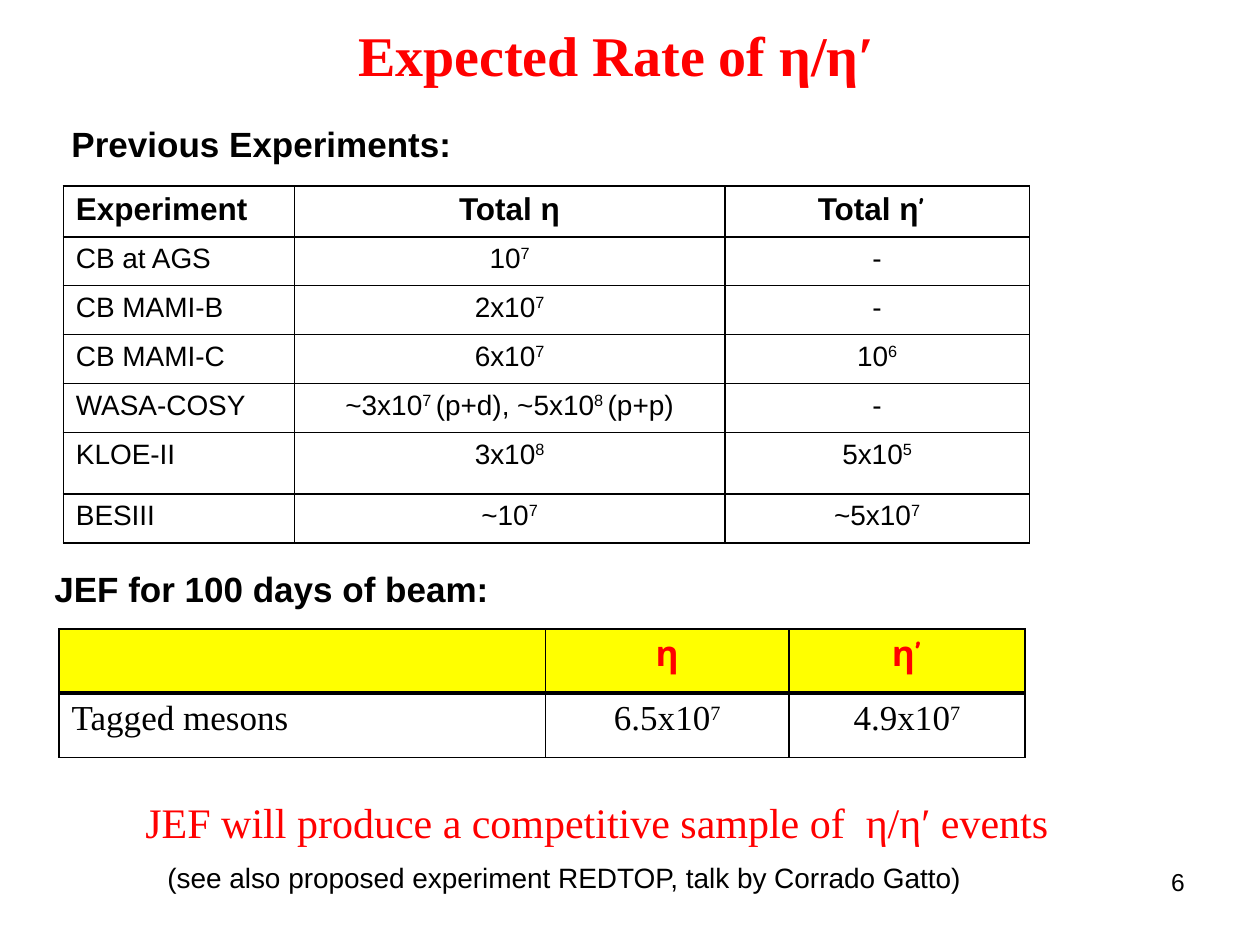
from dataclasses import dataclass

from lxml import etree
from pptx import Presentation
from pptx.dml.color import RGBColor
from pptx.enum import text
from pptx.oxml.ns import qn
from pptx.util import Pt

LEFT, CENTER, RIGHT = text.PP_ALIGN.LEFT, text.PP_ALIGN.CENTER, text.PP_ALIGN.RIGHT


@dataclass(frozen=True)
class Theme:
    black: str = "000000"
    red: str = "FF0000"
    yellow: str = "FFFF00"
    white: str = "FFFFFF"
    sans: str = "Arial"
    serif: str = "Times New Roman"
    accent: str = "Comic Neue"
    title: int = 32
    claim: int = 24
    heading: int = 20
    table_head: int = 18
    body: int = 16
    number: int = 14
    thin: int = 1
    thick: int = 3


THEME = Theme()


def font_format(name, size, color=THEME.black, bold=False):
    return {"name": name, "size": Pt(size), "bold": bold, "color": color}


def write(paragraph, content, style, align=LEFT):
    """Fill a paragraph; ^ toggles superscript and | toggles the accent font."""
    paragraph.alignment = align
    for level, part in enumerate(content.split("^")):
        for voice, words in enumerate(part.split("|")):
            if not words:
                continue
            run = paragraph.add_run()
            run.text = words
            for key, value in style.items():
                if key == "color":
                    run.font.color.rgb = RGBColor.from_string(value)
                else:
                    setattr(run.font, key, value)
            if voice % 2:
                run.font.name = THEME.accent
            if level % 2:
                run.font._element.set("baseline", "30000")


def place(shape, box):
    for name, value in zip(("left", "top", "width", "height"), box):
        setattr(shape, name, Pt(value))


def add_title(slide, box, content):
    title = slide.shapes.title
    place(title, box)
    title.text_frame.vertical_anchor = text.MSO_ANCHOR.MIDDLE
    write(title.text_frame.paragraphs[0], content,
          font_format(THEME.serif, THEME.title, THEME.red, True), CENTER)


def add_text(slide, box, content, style, align=LEFT):
    frame = slide.shapes.add_textbox(*map(Pt, box)).text_frame
    frame.word_wrap = True
    write(frame.paragraphs[0], content, style, align)


def set_borders(cell, top=THEME.thin, bottom=THEME.thin):
    properties = cell._tc.get_or_add_tcPr()
    widths = {"lnL": THEME.thin, "lnR": THEME.thin, "lnT": top, "lnB": bottom}
    for index, (side, width) in enumerate(widths.items()):
        line = etree.Element(qn(f"a:{side}"), w=str(Pt(width)))
        fill = etree.SubElement(line, qn("a:solidFill"))
        etree.SubElement(fill, qn("a:srgbClr"), val=THEME.black)
        properties.insert(index, line)


def add_grid(slide, left, top, widths, heights):
    """Add an unstyled table and return it."""
    frame = slide.shapes.add_table(len(heights), len(widths), Pt(left), Pt(top),
                                   Pt(sum(widths)), Pt(sum(heights)))
    table = frame.table
    table.first_row = table.horz_banding = False
    for column, width in zip(table.columns, widths):
        column.width = Pt(width)
    for row, height in zip(table.rows, heights):
        row.height = Pt(height)
    return table


def fill_grid(table, rows, head_style, body_style):
    for r, row in enumerate(rows):
        for c, content in enumerate(row):
            write(table.cell(r, c).text_frame.paragraphs[0], content,
                  body_style if r else head_style, CENTER if c else LEFT)


def add_experiments(slide, left, top):
    rows = [
        ("Experiment", "Total η", "Total η|’ "),
        ("CB at AGS", "10^7", "-"),
        ("CB MAMI-B", "2x10^7", "-"),
        ("CB MAMI-C", "6x10^7", "10^6"),
        ("WASA-COSY", "~3x10^7 ^(p+d), ~5x10^8 ^(p+p)", "-"),
        ("KLOE-II", "3x10^8", "5x10^5"),
        ("BESIII", "~10^7", "~5x10^7"),
    ]
    table = add_grid(slide, left, top, (132, 246, 174), (29, 28, 28, 28, 28, 35, 28))
    fill_grid(table, rows, font_format(THEME.sans, THEME.table_head, bold=True),
              font_format(THEME.sans, THEME.body))
    for cell in table.iter_cells():
        cell.fill.background()
        set_borders(cell)


def add_yield(slide, left, top):
    rows = [("", "η", " η’ "), ("Tagged mesons", "6.5x10^7", "4.9x10^7")]
    table = add_grid(slide, left, top, (278, 139, 135), (36.8, 36.8))
    fill_grid(table, rows, font_format(THEME.accent, THEME.heading, THEME.red, True),
              font_format(THEME.serif, THEME.heading))
    # The heavy rule lies between the header and the values
    looks = ((THEME.yellow, {"bottom": THEME.thick}), (THEME.white, {"top": THEME.thick}))
    for row, (color, edges) in zip(table.rows, looks):
        for cell in row.cells:
            cell.fill.solid()
            cell.fill.fore_color.rgb = RGBColor.from_string(color)
            set_borders(cell, **edges)


def main():
    presentation = Presentation()
    presentation.slide_width, presentation.slide_height = Pt(720), Pt(540)
    slide = presentation.slides.add_slide(presentation.slide_layouts[5])
    heading = font_format(THEME.sans, THEME.heading, bold=True)

    add_title(slide, (14.4, -2, 684, 65.5), "Expected Rate of η/η′ ")
    # Earlier results
    add_text(slide, (33.8, 66.5, 294, 31.5), "Previous Experiments:", heading)
    add_experiments(slide, 36.2, 106.3)
    # Expected yield
    add_text(slide, (24, 321, 294, 31.5), "JEF for 100 days of beam:", heading)
    add_yield(slide, 33.8, 359.3)
    # Conclusion and page number
    add_text(slide, (76, 451.5, 561, 36),
             "JEF will produce a competitive sample of  η/η′ events",
             font_format(THEME.serif, THEME.claim, THEME.red))
    add_text(slide, (88.5, 488, 478, 26.6),
             "(see also proposed experiment REDTOP, talk by Corrado Gatto)",
             font_format(THEME.sans, THEME.body))
    add_text(slide, (516, 492, 168, 37.5), "6",
             font_format(THEME.sans, THEME.number), RIGHT)

    presentation.save("out.pptx")


if __name__ == "__main__":
    main()
